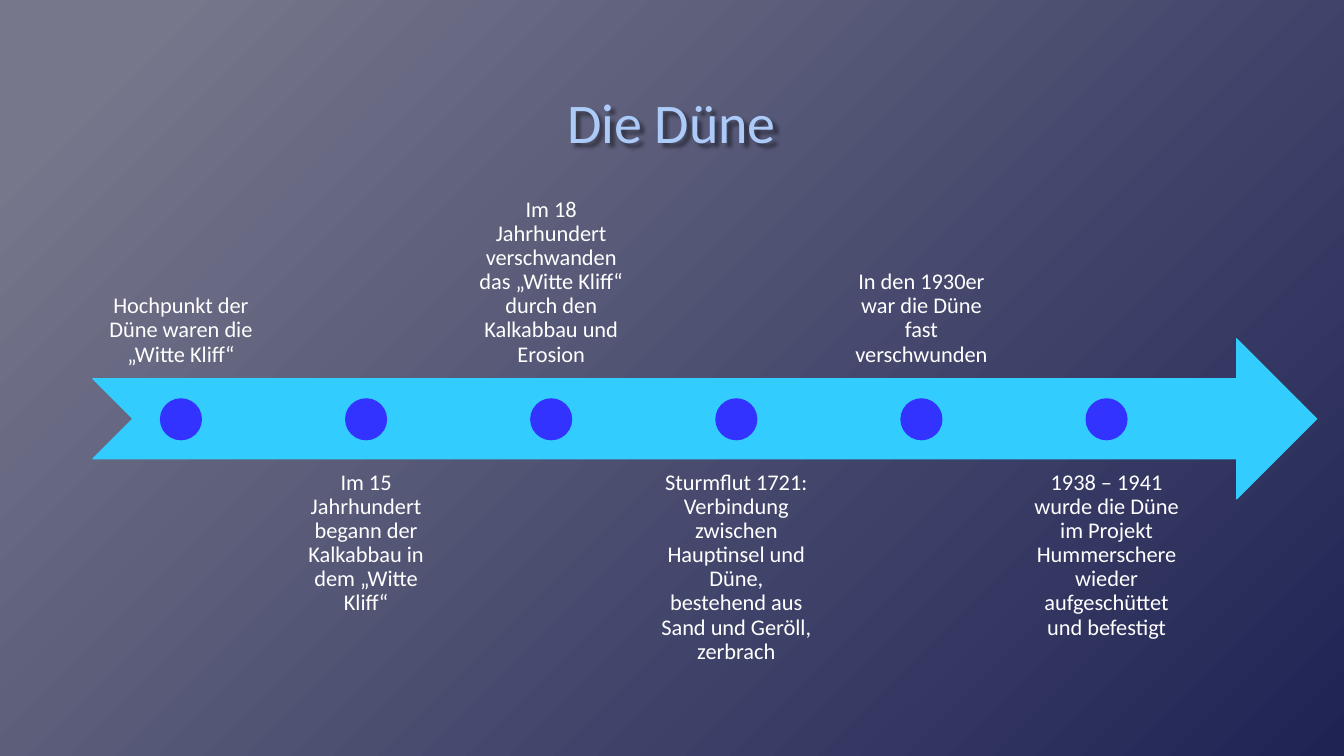
from lxml.etree import SubElement as Sub
from pptx import Presentation
from pptx.dml.color import RGBColor as RGB
from pptx.enum.shapes import MSO_SHAPE as Kind
from pptx.enum.text import MSO_ANCHOR as Anchor, PP_ALIGN as Align
from pptx.oxml.ns import qn
from pptx.util import Inches, Pt

GREY = RGB(0x76, 0x77, 0x8B)
NAVY = RGB(0x1F, 0x23, 0x54)
PALE = RGB(0xAC, 0xCB, 0xF9)
CYAN = RGB(0x33, 0xCC, 0xFF)
BLUE = RGB(0x33, 0x33, 0xFF)
WHITE = RGB(0xFF, 0xFF, 0xFF)
FONT = "Calibri"

LEFT, SPAN = 0.92, 9.18
WIDE, TALL = 1.75, 1.59
UPPER, LOWER = 2.17, 4.55
DOT, INSET = 0.4, 0.12

EVENTS = [
    "Hochpunkt der Düne waren die „Witte Kliff“",
    "Im 15 Jahrhundert begann der Kalkabbau in dem „Witte Kliff“",
    "Im 18 Jahrhundert verschwanden das „Witte Kliff“ durch den Kalkabbau und Erosion",
    "Sturmflut 1721: Verbindung zwischen Hauptinsel und Düne, bestehend aus Sand und Geröll, zerbrach",
    "In den 1930er war die Düne fast verschwunden",
    "1938 – 1941 wurde die Düne im Projekt Hummerscherewieder aufgeschüttet und befestigt",
]


def box(*sides):
    return [Inches(side) for side in sides]


def paint(slide):
    fill = slide.background.fill
    fill.gradient()
    fill.gradient_angle = 315
    for stop, place, color in zip(fill.gradient_stops, (0.08, 1), (GREY, NAVY)):
        stop.position = place
        stop.color.rgb = color


def style(frame, text, size, color):
    frame.text = text
    frame.word_wrap = True
    para = frame.paragraphs[0]
    para.alignment = Align.CENTER
    font = para.runs[0].font
    font.name = FONT
    font.size = Pt(size)
    font.color.rgb = color
    return para


def shade(shape):
    effects = Sub(shape.element.spPr, qn("a:effectLst"))
    shadow = Sub(effects, qn("a:outerShdw"), blurRad="38100", dist="38100", dir="2700000")
    color = Sub(shadow, qn("a:srgbClr"), val="000000")
    Sub(color, qn("a:alpha"), val="45000")


def head(slide, text):
    title = slide.shapes.title
    title.left, title.top, title.width, title.height = box(1, 0.67, 11.32, 1.06)
    title.text_frame.vertical_anchor = Anchor.MIDDLE
    style(title.text_frame, text, 40, PALE)
    shade(title)


def solid(slide, kind, area, color, line):
    shape = slide.shapes.add_shape(kind, *area)
    shape.shadow.inherit = False
    shape.fill.solid()
    shape.fill.fore_color.rgb = color
    shape.line.color.rgb = color
    shape.line.width = Pt(line)


def label(slide, area, text, anchor):
    frame = slide.shapes.add_textbox(*area).text_frame
    frame.margin_left = frame.margin_right = Inches(INSET)
    frame.margin_top = frame.margin_bottom = Inches(INSET)
    frame.vertical_anchor = anchor
    style(frame, text, 16, WHITE).line_spacing = 0.9


def event(slide, index, text):
    left = LEFT + SPAN * index / (len(EVENTS) - 1)
    top, anchor = (LOWER, Anchor.TOP) if index % 2 else (UPPER, Anchor.BOTTOM)
    label(slide, box(left, top, WIDE, TALL), text, anchor)
    dot = box(left + (WIDE - DOT) / 2, 3.96, DOT, DOT)
    solid(slide, Kind.OVAL, dot, BLUE, 1.25)


def main():
    deck = Presentation()
    deck.slide_width, deck.slide_height = box(13.33, 7.5)
    slide = deck.slides.add_slide(deck.slide_layouts[5])
    paint(slide)
    head(slide, "Die Düne")
    arrow = box(LEFT, 3.36, 12.14, TALL)
    solid(slide, Kind.NOTCHED_RIGHT_ARROW, arrow, CYAN, 0.75)
    for index, text in enumerate(EVENTS):
        event(slide, index, text)
    deck.save("out.pptx")


if __name__ == "__main__":
    main()
